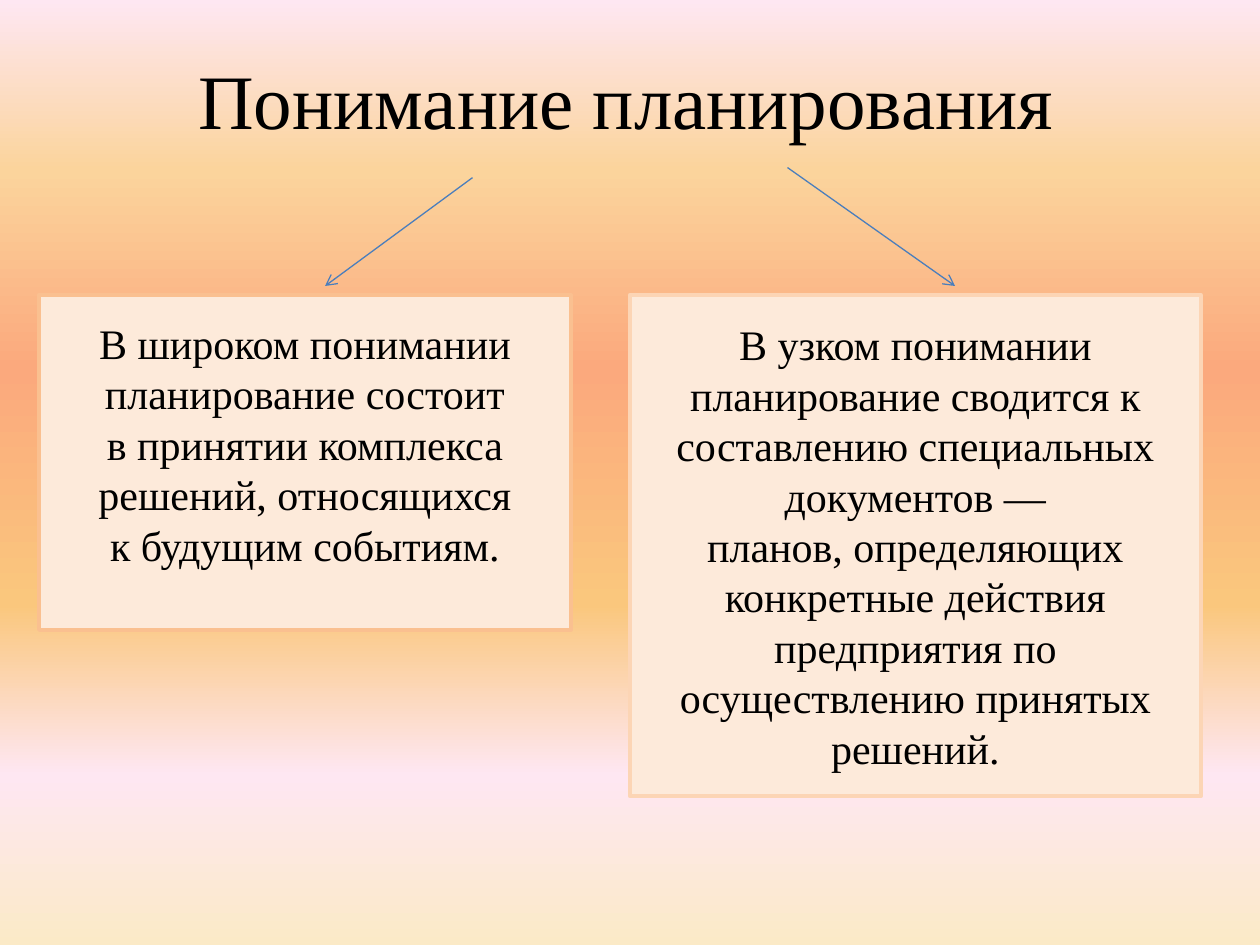
from lxml.etree import SubElement
from pptx import Presentation
from pptx.dml.color import RGBColor
from pptx.enum.shapes import MSO_CONNECTOR, MSO_SHAPE
from pptx.enum.text import MSO_ANCHOR, PP_ALIGN
from pptx.oxml import parse_xml
from pptx.oxml.ns import nsdecls, qn
from pptx.util import Inches, Pt

FONT = "Times New Roman"
BLACK = RGBColor(0x00, 0x00, 0x00)
CREAM = RGBColor(0xFD, 0xEA, 0xDA)
PEACH = RGBColor(0xFC, 0xD5, 0xB5)
ORANGE = RGBColor(0xFA, 0xC0, 0x90)
BLUE = RGBColor(0x4B, 0x7E, 0xBC)

# Background stops, from the bottom edge to the top
STOPS = [(0, "FBEAC7"), (18, "FEE7F2"), (36, "FAC77D"),
         (61, "FBA97D"), (82, "FBD49C"), (100, "FEE7F2")]

# \v is a line break inside the paragraph
BROAD = ("В широком понимании планирование состоит\v"
         "в принятии комплекса решений, относящихся\v"
         "к будущим событиям.")
NARROW = ("В узком понимании планирование сводится к\v"
          "составлению специальных документов —\v"
          "планов, определяющих конкретные действия\v"
          "предприятия по осуществлению принятых\v"
          "решений.")


def set_back(slide):
    stops = "".join(f'<a:gs pos="{pos * 1000}"><a:srgbClr val="{tint}"/></a:gs>'
                    for pos, tint in STOPS)
    fill = parse_xml(f'<a:gradFill {nsdecls("a")} rotWithShape="1">'
                     f'<a:gsLst>{stops}</a:gsLst>'
                     '<a:lin ang="16200000" scaled="0"/></a:gradFill>')
    back = slide.background
    back.fill.solid()
    solid = slide.element.find(".//" + qn("p:bgPr")).find(qn("a:solidFill"))
    solid.getparent().replace(solid, fill)


def set_text(shape, text, size):
    frame = shape.text_frame
    frame.text = text
    frame.word_wrap = True
    frame.vertical_anchor = MSO_ANCHOR.MIDDLE
    para = frame.paragraphs[0]
    para.alignment = PP_ALIGN.CENTER
    for run in para.runs:
        run.font.name = FONT
        run.font.size = Pt(size)
        run.font.color.rgb = BLACK


def add_title(slide, text):
    title = slide.shapes.title
    title.left, title.top = Inches(0.47), Inches(0.16)
    title.width, title.height = Inches(9), Inches(1.25)
    set_text(title, text, 44)


def add_box(slide, left, width, height, text, edge):
    box = slide.shapes.add_shape(MSO_SHAPE.RECTANGLE, Inches(left), Inches(2.34),
                                 Inches(width), Inches(height))
    box.shadow.inherit = False
    box.fill.solid()
    box.fill.fore_color.rgb = CREAM
    box.line.color.rgb = edge
    box.line.width = Pt(2.25)
    set_text(box, text, 24)
    return box


def add_arrow(slide, *ends):
    arrow = slide.shapes.add_connector(MSO_CONNECTOR.STRAIGHT, *map(Inches, ends))
    arrow.line.color.rgb = BLUE
    arrow.line.width = Pt(0.75)
    SubElement(arrow.line._get_or_add_ln(), qn("a:tailEnd"), type="arrow")
    SubElement(arrow.element.spPr, qn("a:effectLst"))


def main():
    deck = Presentation()
    deck.slide_width, deck.slide_height = Inches(10), Inches(7.5)
    slide = deck.slides.add_slide(deck.slide_layouts[5])
    set_back(slide)
    add_title(slide, "Понимание планирования")

    # The two meanings of planning
    add_box(slide, 5, 4.53, 3.98, NARROW, PEACH)
    broad = add_box(slide, 0.31, 4.22, 2.66, BROAD, ORANGE)
    broad.text_frame.margin_bottom = Inches(0.35)

    # Arrows from the title to the boxes
    add_arrow(slide, 3.75, 1.41, 2.58, 2.27)
    add_arrow(slide, 6.25, 1.33, 7.58, 2.27)
    deck.save("out.pptx")


if __name__ == "__main__":
    main()
